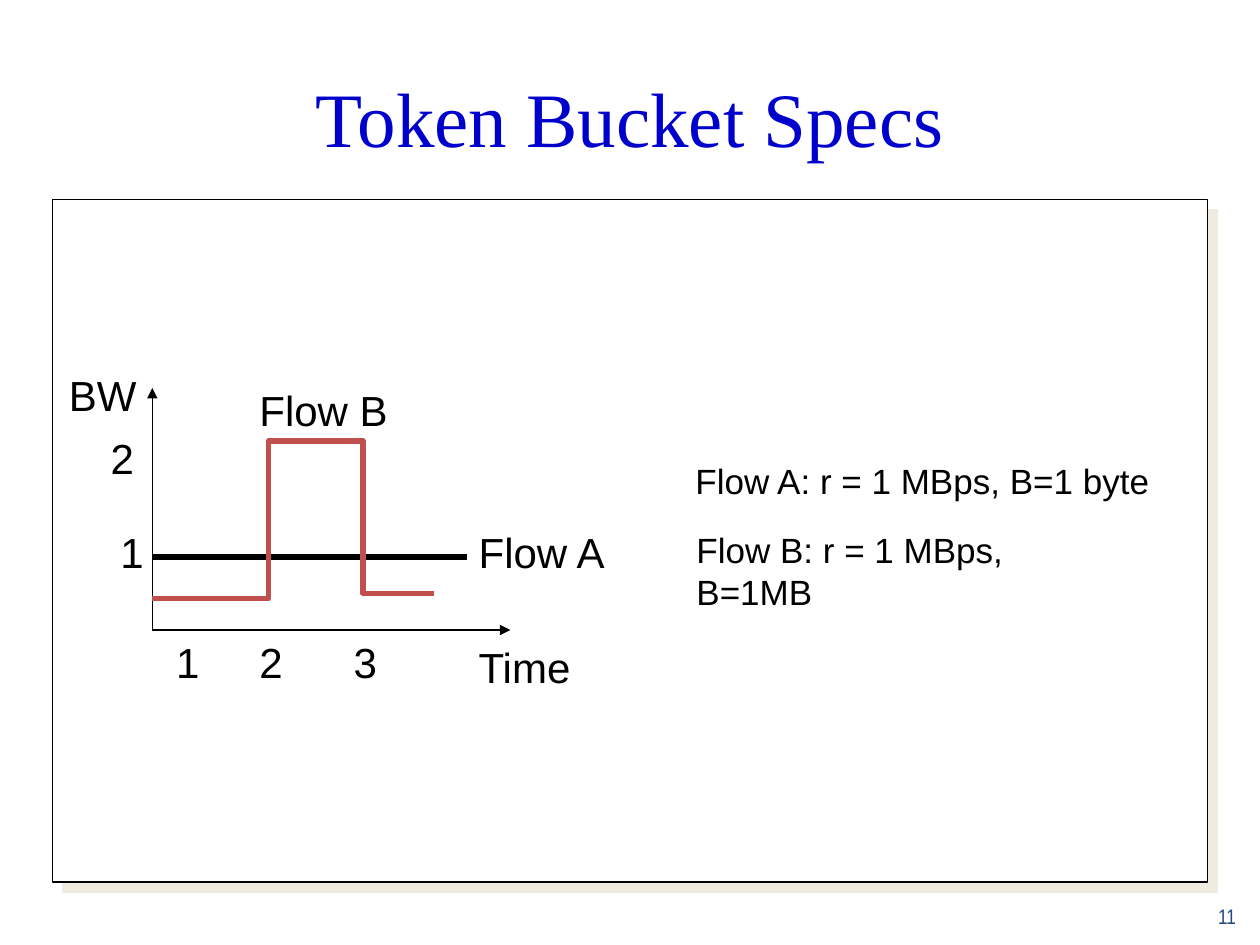
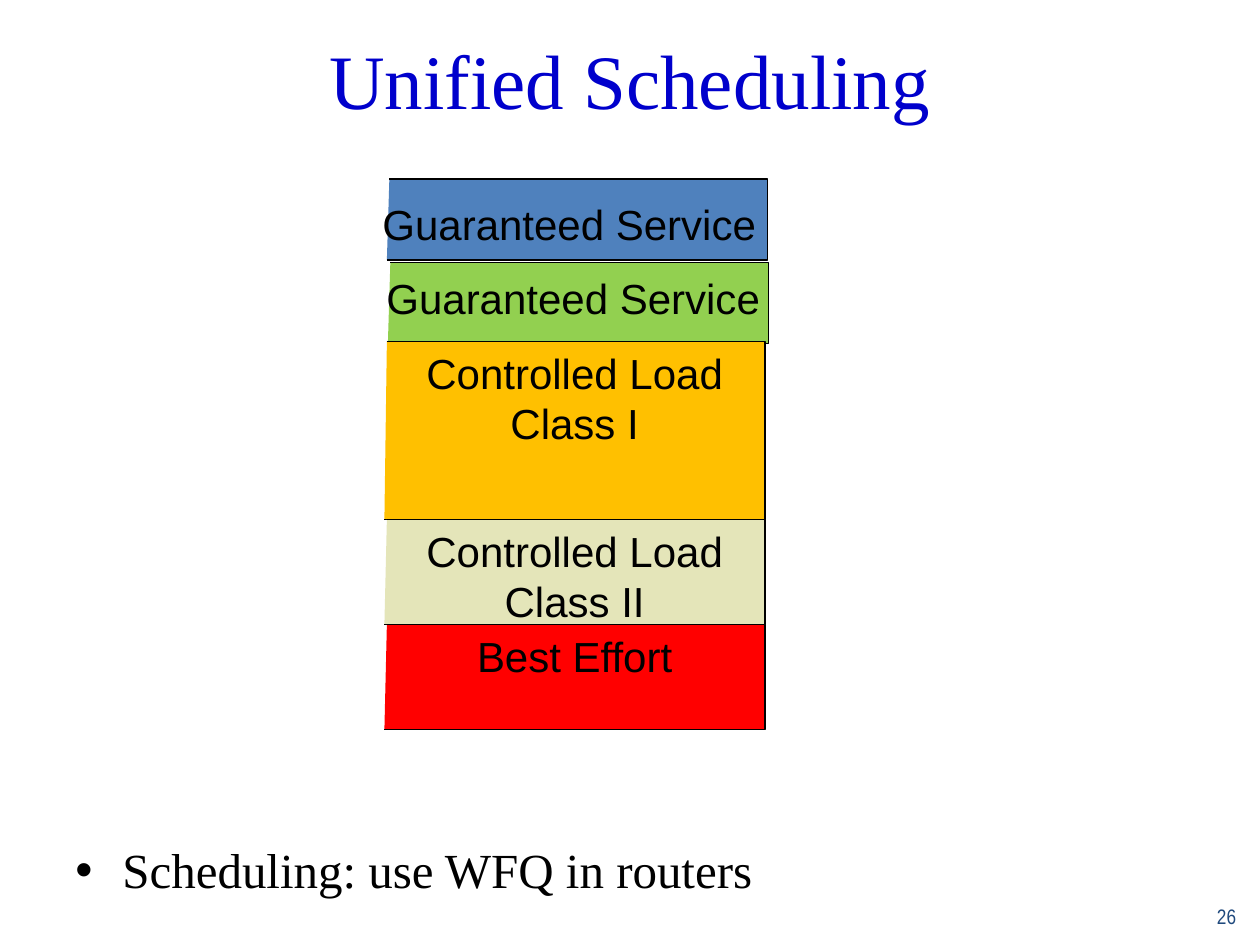
from dataclasses import dataclass

from lxml import etree
from pptx import Presentation
from pptx.dml.color import RGBColor
from pptx.enum.shapes import MSO_CONNECTOR, MSO_SHAPE
from pptx.enum.text import MSO_ANCHOR, MSO_AUTO_SIZE, PP_ALIGN
from pptx.oxml.ns import qn
from pptx.util import Cm, Pt

LEFT, CENTER, RIGHT = PP_ALIGN.LEFT, PP_ALIGN.CENTER, PP_ALIGN.RIGHT
TOP, MIDDLE, BOTTOM = MSO_ANCHOR.TOP, MSO_ANCHOR.MIDDLE, MSO_ANCHOR.BOTTOM
FIT_SHAPE, FIXED = MSO_AUTO_SIZE.SHAPE_TO_FIT_TEXT, MSO_AUTO_SIZE.NONE
STRAIGHT, RECTANGLE = MSO_CONNECTOR.STRAIGHT, MSO_SHAPE.RECTANGLE
TITLE_ONLY = 5


@dataclass(frozen=True)
class Theme:
    black: str = "000000"
    white: str = "FFFFFF"
    title: str = "0000CC"
    number: str = "1F497D"
    shadow: str = "EEECE1"
    burst: str = "C0504D"
    serif: str = "Times New Roman"
    sans: str = "Arial"
    narrow: str = "Arial Narrow"
    title_size: float = 44
    bullet_size: float = 28
    label_size: float = 24
    spec_size: float = 20
    number_size: float = 12
    thin: float = 0.75
    thick: float = 3


THEME = Theme()

# Content of the token bucket slide; all lengths are in cm
SPECS = {"title": "Token Bucket Specs", "title_top": 0.76, "number": "11"}
PANEL = (1.06, 4.02, 23.28, 13.76)
ORIGIN = (3.07, 12.7)
AXIS_ENDS = [(3.07, 7.82), (10.29, 12.7)]
FLOW_A = [(3.07, 11.23), (9.42, 11.23)]
FLOW_B = [(3.07, 12.07), (5.41, 12.07), (5.41, 8.89),
          (7.32, 8.89), (7.32, 11.96), (8.74, 11.96)]
GRAPH_LABELS = [  # text, left, top, width
    ("BW", 1.14, 7.32, 1.88),
    ("Time", 9.4, 12.8, 2.39),
    ("1", 2.18, 10.49, 0.99),
    ("2", 1.98, 8.59, 0.99),
    ("1", 3.3, 12.7, 0.99),
    ("2", 4.98, 12.7, 0.99),
    ("3", 6.88, 12.7, 0.99),
    ("Flow A", 9.4, 10.49, 3.1),
    ("Flow B", 4.98, 7.62, 3.1),
]
FLOW_SPECS = [  # text, left, top, width, wrap
    ("Flow A: r = 1 MBps, B=1 byte", 13.77, 9.14, 9.68, False),
    ("Flow B: r = 1 MBps, B=1MB", 13.79, 10.52, 8.1, True),
]

# Content of the scheduling slide
SCHEDULING = {"title": "Unified Scheduling", "title_top": 0, "number": "26"}
BAND_WIDTH, BAND_SLANT = 7.67, 0.05
BANDS = [  # text, left, top, height, fill
    ("", 7.8, 3.61, 1.63, "4F81BD"),
    ("", 7.82, 5.29, 1.64, "92D050"),
    ("Controlled Load\nClass I", 7.75, 6.88, 3.59, "FFC000"),
    ("Controlled Load\nClass II", 7.75, 10.47, 2.12, "E4E5B9"),
    ("Best Effort", 7.75, 12.59, 2.12, "FF0000"),
]
BAND_LABELS = [
    ("Guaranteed Service", 7.46, 3.88, 8.13),
    ("Guaranteed Service", 7.54, 5.37, 8.13),
]
BULLET = "Scheduling: use WFQ in routers"


def color(value):
    return RGBColor.from_string(value)


def write(shape, text, *, size=THEME.label_size, font=THEME.sans, ink=THEME.black,
          align=LEFT, anchor=TOP, wrap=True, fit=FIXED):
    """Fill a shape with text, one paragraph per line, and format it."""
    frame = shape.text_frame
    frame.text = text
    frame.word_wrap = wrap
    frame.auto_size = fit
    frame.vertical_anchor = anchor
    for paragraph in frame.paragraphs:
        paragraph.alignment = align
        for run in paragraph.runs:
            run.font.name = font
            run.font.size = Pt(size)
            run.font.color.rgb = color(ink)


def add_text(slide, text, left, top, width, height, **style):
    box = slide.shapes.add_textbox(Cm(left), Cm(top), Cm(width), Cm(height))
    write(box, text, **style)
    return box


def add_label(slide, text, left, top, width, **style):
    style = {"wrap": False, "fit": FIT_SHAPE, **style}
    add_text(slide, text, left, top, width, 1.27, **style)


def style_shape(shape, fill=None, line=THEME.black, weight=THEME.thin):
    shape.shadow.inherit = False
    if fill:
        shape.fill.solid()
        shape.fill.fore_color.rgb = color(fill)
    else:
        shape.fill.background()
    shape.line.color.rgb = color(line)
    shape.line.width = Pt(weight)


def add_line(slide, start, end, weight=THEME.thin, arrow=False):
    ends = [Cm(value) for value in (*start, *end)]
    connector = slide.shapes.add_connector(STRAIGHT, *ends)
    connector.line.color.rgb = color(THEME.black)
    connector.line.width = Pt(weight)
    if arrow:
        line = connector.line._get_or_add_ln()
        etree.SubElement(line, qn("a:tailEnd"), type="triangle")
    etree.SubElement(connector._element.spPr, qn("a:effectLst"))


def add_outline(slide, points, **style):
    """Draw an open outline through the points."""
    first, *rest = [(Cm(x), Cm(y)) for x, y in points]
    builder = slide.shapes.build_freeform(*first)
    builder.add_line_segments(rest, close=False)
    shape = builder.convert_to_shape()
    style_shape(shape, **style)
    return shape


def add_panel(slide):
    panel = slide.shapes.add_shape(RECTANGLE, *[Cm(value) for value in PANEL])
    style_shape(panel, fill=THEME.white)
    effects = panel._element.spPr.find(qn("a:effectLst"))
    shadow = etree.SubElement(effects, qn("a:outerShdw"), dist=str(Pt(8.5)),
                              dir="2700000", algn="ctr", rotWithShape="0")
    etree.SubElement(shadow, qn("a:srgbClr"), val=THEME.shadow)


def add_bullet(slide, text):
    box = add_text(slide, text, 1.27, 16.94, 22.86, 2.1,
                   size=THEME.bullet_size, font=THEME.serif)
    paragraph = box.text_frame.paragraphs[0]
    paragraph.line_spacing = 0.9
    properties = paragraph._p.get_or_add_pPr()
    properties.set("marL", str(Cm(0.95)))
    properties.set("indent", str(-Cm(0.95)))
    etree.SubElement(properties, qn("a:buFont"), typeface=THEME.sans)
    etree.SubElement(properties, qn("a:buChar"), char="•")


def add_slide(presentation, content):
    """Start a slide with the shared title and page number."""
    slide = presentation.slides.add_slide(presentation.slide_layouts[TITLE_ONLY])
    title = slide.shapes.title
    title.left, title.top = Cm(1.27), Cm(content["title_top"])
    title.width, title.height = Cm(22.86), Cm(3.18)
    write(title, content["title"], size=THEME.title_size, font=THEME.serif,
          ink=THEME.title, align=CENTER, anchor=MIDDLE)
    add_text(slide, content["number"], 19.89, 17.58, 5.28, 1.27,
             size=THEME.number_size, font=THEME.narrow, ink=THEME.number,
             align=RIGHT, anchor=BOTTOM)
    return slide


def build_specs(presentation):
    slide = add_slide(presentation, SPECS)
    add_panel(slide)
    # Bandwidth graph
    for end in AXIS_ENDS:
        add_line(slide, ORIGIN, end, arrow=True)
    add_line(slide, *FLOW_A, weight=THEME.thick)
    add_outline(slide, FLOW_B, line=THEME.burst, weight=THEME.thick)
    for label in GRAPH_LABELS:
        add_label(slide, *label)
    # Flow parameters
    for *label, wrap in FLOW_SPECS:
        add_label(slide, *label, size=THEME.spec_size, wrap=wrap)


def build_scheduling(presentation):
    slide = add_slide(presentation, SCHEDULING)
    # Stack of service classes
    for text, left, top, height, fill in BANDS:
        right, bottom = left + BAND_WIDTH, top + height
        corners = [(left + BAND_SLANT, top), (right, top),
                   (right, bottom), (left, bottom)]
        band = add_outline(slide, corners, fill=fill)
        if text:
            write(band, text, align=CENTER)
    for label in BAND_LABELS:
        add_label(slide, *label)
    add_bullet(slide, BULLET)


def main():
    presentation = Presentation()
    presentation.slide_width, presentation.slide_height = Cm(25.4), Cm(19.05)
    build_specs(presentation)
    build_scheduling(presentation)
    presentation.save("out.pptx")


if __name__ == "__main__":
    main()
